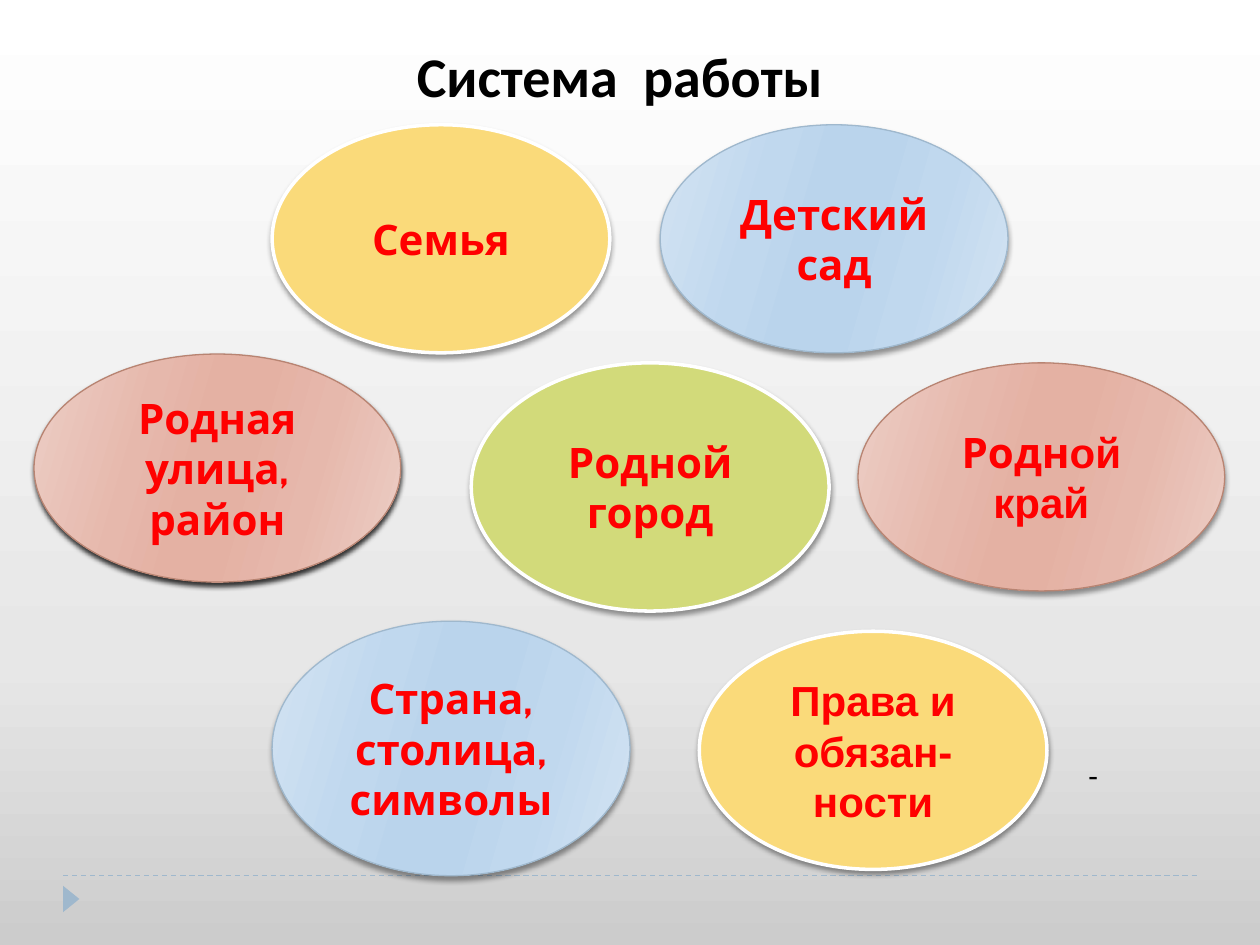
from lxml.etree import SubElement
from pptx import Presentation
from pptx.dml.color import RGBColor
from pptx.enum.dml import MSO_LINE
from pptx.enum.shapes import MSO_CONNECTOR, MSO_SHAPE
from pptx.enum.text import MSO_ANCHOR, PP_ALIGN
from pptx.oxml.ns import qn
from pptx.util import Inches, Pt

C = {"red": "FF0000", "black": "000000", "white": "FFFFFF", "yellow": "FADA7A",
     "green": "D2DA7A", "blue": "9FB8CD", "brown": "B88472"}


def sheen(edge, mid, core):
    return [(0, edge), (30, mid), (45, core), (55, core), (73, mid), (100, edge)]


BACKGROUND = [(0, "CCCCCC"), (30, "E7E7E7"), (100, "FFFFFF")]
STYLES = {  # fill, line colour, line width
    "yellow": (C["yellow"], C["white"], 2),
    "green": (C["green"], C["white"], 2),
    "blue": (sheen("D3E3F2", "C0D8EE", "BAD4EC"), C["blue"], 0.75),
    "rose": (sheen("ECCEC6", "E6B8AC", "E4B1A3"), C["brown"], 0.75),
}
# style, (left, top, width, height), [(text, font)], shadow opacity %
TOPICS = [
    ("yellow", (2.16, 0.99, 2.68, 1.81), [("Семья", "Cabin")], 40),
    ("green", (3.74, 2.88, 2.84, 1.97), [("Родной город", "Cabin")], 40),
    ("blue", (2.16, 4.93, 2.84, 2.02), [("Страна, столица, символы", "Cabin")], 40),
    ("blue", (5.24, 0.99, 2.76, 1.81), [("Детский сад", "Cabin")], 40),
    ("yellow", (5.55, 5.01, 2.76, 1.89), [("Права и обязан-ности", "Arial")], 40),
    ("rose", (0.27, 2.81, 2.91, 1.81), [("Родная улица, район", "Cabin")], 78),
    ("rose", (6.81, 2.88, 2.91, 1.81), [("Родн", "Cabin"), ("ой край", "Arial")], 40),
]


def rgb(color):
    return RGBColor.from_string(color)


def set_gradient(fill, owner, stops, angle):
    """Fill with any number of stops; angle is counter-clockwise."""
    fill.gradient()
    fill.gradient_angle = angle
    gs_list = owner.find(".//" + qn("a:gsLst"))
    for gs in list(gs_list):
        gs_list.remove(gs)
    for pos, color in stops:
        gs = SubElement(gs_list, qn("a:gs"), pos=str(pos * 1000))
        SubElement(gs, qn("a:srgbClr"), val=color)


def add_shadow(sp, opacity):
    sp.shadow.inherit = False
    effects = sp._element.spPr.find(qn("a:effectLst"))
    shadow = SubElement(effects, qn("a:outerShdw"), blurRad=str(Pt(3)), dist=str(Pt(2)),
                        dir="5400000", rotWithShape="0")
    color = SubElement(shadow, qn("a:srgbClr"), val=C["black"])
    SubElement(color, qn("a:alpha"), val=str(opacity * 1000))


def write(sp, runs, size, color=C["black"], bold=False, align=PP_ALIGN.CENTER,
          anchor=MSO_ANCHOR.TOP, wrap=True):
    tf = sp.text_frame
    tf.word_wrap = wrap
    tf.vertical_anchor = anchor
    p = tf.paragraphs[0]
    p.alignment = align
    for text, font in runs:
        r = p.add_run()
        r.text = text
        r.font.name, r.font.size, r.font.bold = font, Pt(size), bold
        r.font.color.rgb = rgb(color)


def add_topic(s, style, box, runs, opacity):
    fill, line, width = STYLES[style]
    sp = s.shapes.add_shape(MSO_SHAPE.OVAL, *map(Inches, box))
    if isinstance(fill, list):
        set_gradient(sp.fill, sp._element.spPr, fill, 344)
    else:
        sp.fill.solid()
        sp.fill.fore_color.rgb = rgb(fill)
    sp.line.color.rgb = rgb(line)
    sp.line.width = Pt(width)
    add_shadow(sp, opacity)
    write(sp, runs, 24, color=C["red"], bold=True, anchor=MSO_ANCHOR.MIDDLE)


def add_footer(s):
    rule = s.shapes.add_connector(MSO_CONNECTOR.STRAIGHT, Inches(0.5), Inches(6.95),
                                  Inches(9.5), Inches(6.95))
    rule.line.color.rgb = rgb(C["blue"])
    rule.line.width = Pt(0.75)
    rule.line.dash_style = MSO_LINE.DASH
    SubElement(rule._element.spPr, qn("a:effectLst"))
    marker = s.shapes.add_shape(MSO_SHAPE.ISOSCELES_TRIANGLE, Inches(0.46), Inches(7.07),
                                Inches(0.21), Inches(0.13))
    marker.rotation = 90
    marker.shadow.inherit = False
    marker.fill.solid()
    marker.fill.fore_color.rgb = rgb(C["blue"])
    marker.line.fill.background()


def main():
    prs = Presentation()
    prs.slide_width, prs.slide_height = Inches(10), Inches(7.5)
    s = prs.slides.add_slide(prs.slide_layouts[6])
    set_gradient(s.background.fill, s._element, BACKGROUND, 90)
    add_footer(s)
    dash = s.shapes.add_textbox(Inches(8.54), Inches(5.95), Inches(0.24), Inches(0.4))
    write(dash, [("-", "Calibri")], 18, align=PP_ALIGN.LEFT, wrap=False)
    title = s.shapes.add_textbox(Inches(2.5), Inches(0.28), Inches(4.84), Inches(0.64))
    write(title, [("Система  работы", "Calibri")], 32, bold=True)
    for topic in TOPICS:
        add_topic(s, *topic)
    prs.save("out.pptx")


if __name__ == "__main__":
    main()
